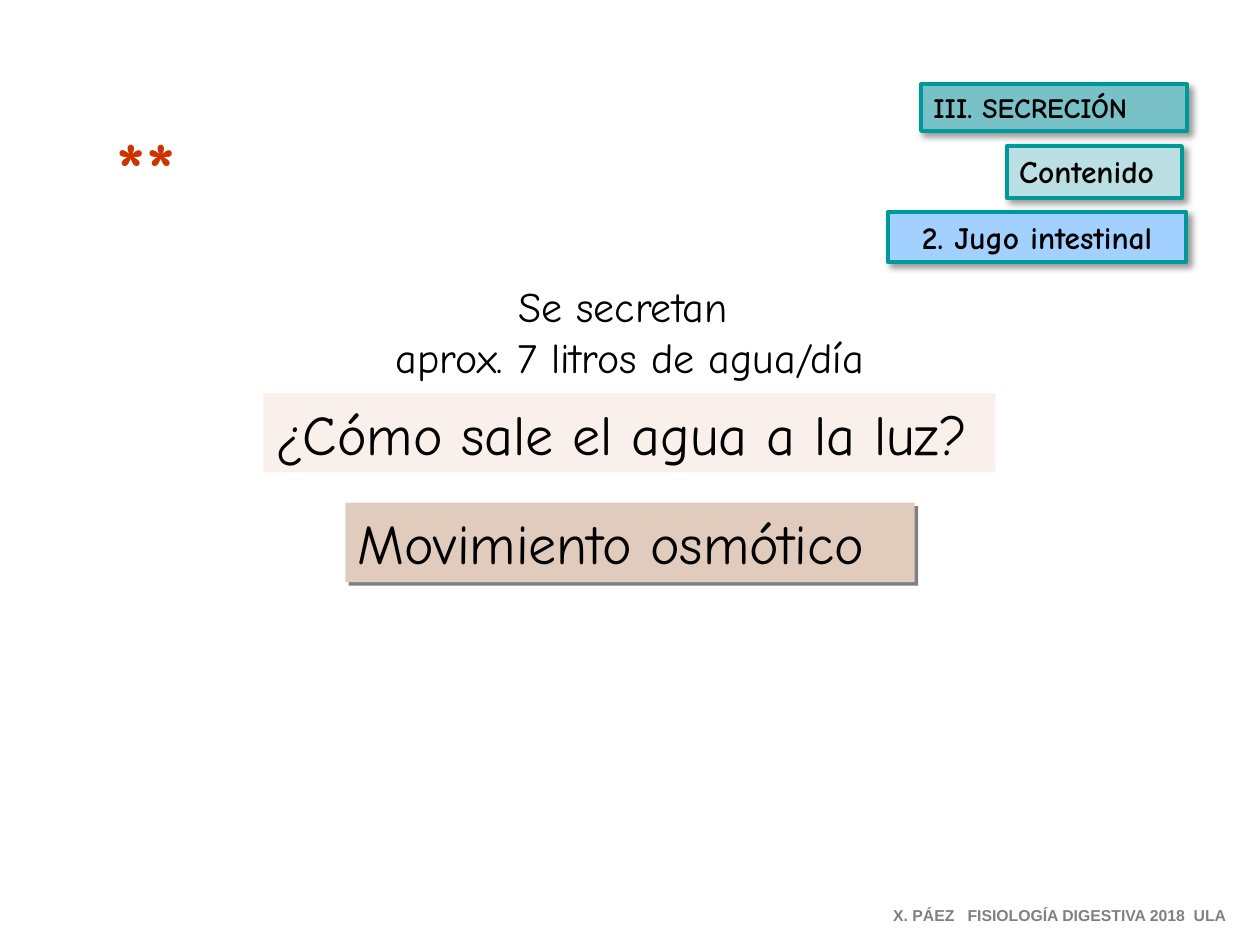
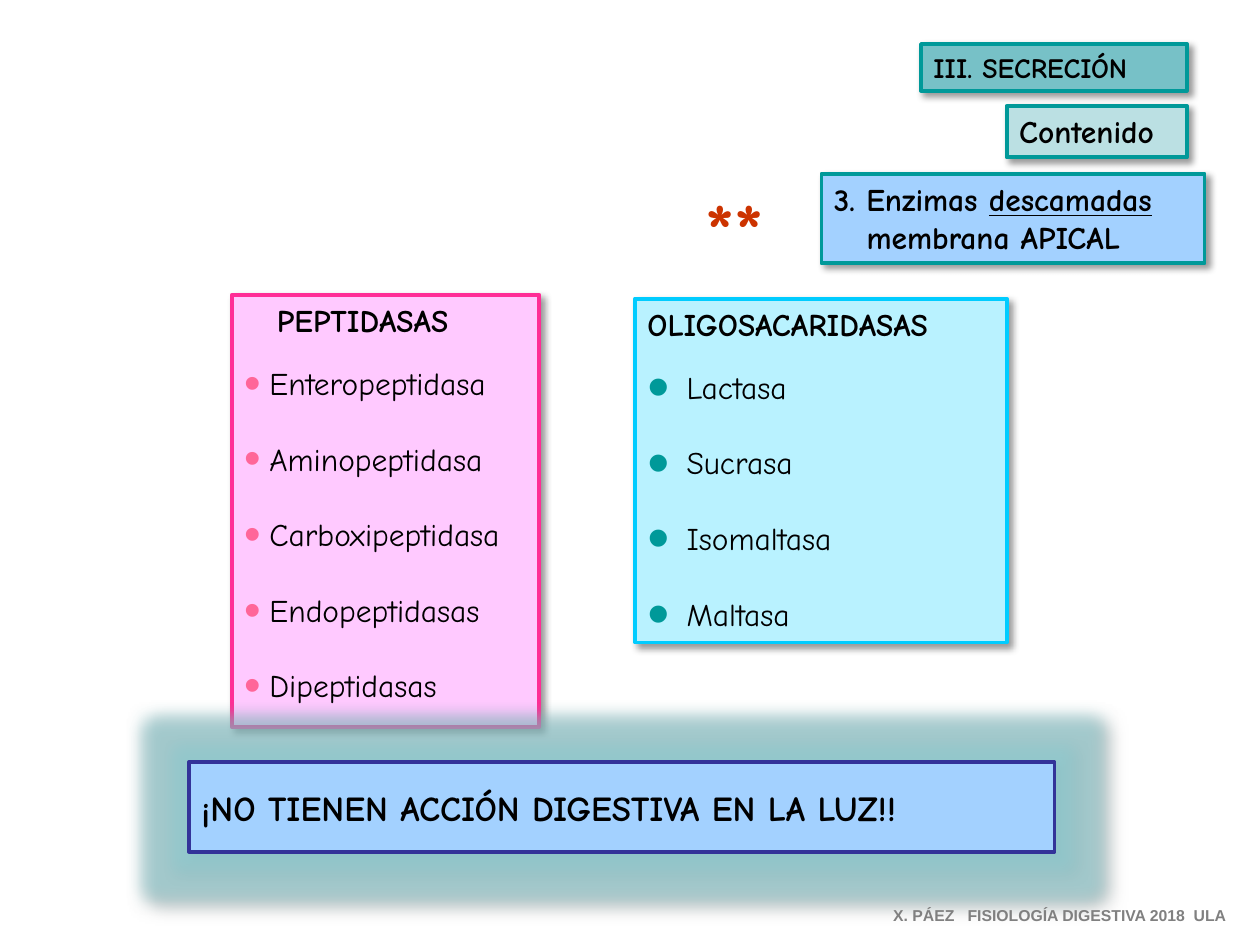
"""Builds two slides on intestinal secretion."""
from dataclasses import dataclass

from lxml.etree import SubElement
from pptx import Presentation
from pptx.dml.color import RGBColor
from pptx.enum.shapes import MSO_SHAPE
from pptx.enum.text import MSO_ANCHOR, PP_ALIGN
from pptx.oxml.ns import qn
from pptx.util import Inches, Pt


@dataclass(frozen=True)
class Theme:
    """Colours, fonts and type sizes of the slides."""
    font: str = "Comic Neue"
    footer_font: str = "Arial"
    black: str = "000000"
    gray: str = "808080"
    red: str = "CC3300"
    teal: str = "009999"
    teal_fill: str = "77C1C7"
    pale_teal: str = "BBE0E3"
    glow: str = "8FCDD2"
    blue_fill: str = "A3D1FF"
    navy: str = "333399"
    cream: str = "F9EFEB"
    tan: str = "E1CBBD"
    pink: str = "FF2D96"
    pink_fill: str = "FFC9FF"
    pink_bullet: str = "FF6699"
    cyan: str = "00CCFF"
    cyan_fill: str = "B9F2FF"
    footer: int = 9
    section: int = 16
    body: int = 18
    banner: int = 20
    lead: int = 24
    question: int = 32
    mark: int = 44
    heading_gap: float = 14.4
    item_gap: float = 21.6


THEME = Theme()
SOFT_SHADOW = (THEME.black, 40, 4, 3)
HARD_SHADOW = (THEME.gray, 100, 0, 2.8)


def add_color(parent, color, alpha):
    """Add a colour with an opacity in percent to an effect."""
    node = SubElement(parent, qn("a:srgbClr"), val=color)
    SubElement(node, qn("a:alpha"), val=str(alpha * 1000))


def add_shadow(effects, color, alpha, blur, distance):
    """Add an outer shadow that falls to the lower right."""
    shadow = SubElement(effects, qn("a:outerShdw"), blurRad=str(Pt(blur)),
                        dist=str(Pt(distance)), dir=str(45 * 60000),
                        algn="ctr", rotWithShape="0")
    add_color(shadow, color, alpha)


def write_text(paragraph, text, size=THEME.body, color=THEME.black, font=THEME.font,
               bold=False, underline=False, shadow=False):
    """Append formatted text to a paragraph."""
    run = paragraph.add_run()
    run.text = text
    run.font.size = Pt(size)
    run.font.name = font
    run.font.bold = bold
    run.font.underline = underline
    run.font.color.rgb = RGBColor.from_string(color)
    if shadow:
        properties = run.font._element
        effects = properties.makeelement(qn("a:effectLst"))
        properties.find(qn("a:solidFill")).addnext(effects)
        add_shadow(effects, THEME.black, 100, 0, 3)


def indent(paragraph, left, first=0):
    """Set the left margin and first-line indent of a paragraph in inches."""
    properties = paragraph._p.get_or_add_pPr()
    properties.set("marL", str(Inches(left)))
    properties.set("indent", str(Inches(first)))
    return properties


class SlideBuilder:
    """Holds the theme, the presentation and the current slide."""

    def __init__(self, theme):
        """Start an empty presentation."""
        self.theme = theme
        self.presentation = Presentation()
        self.presentation.slide_width = Inches(10)
        self.presentation.slide_height = Inches(7.5)
        self.slide = None

    def new_slide(self):
        """Add a blank slide and make it current."""
        self.slide = self.presentation.slides.add_slide(self.presentation.slide_layouts[6])

    def text(self, place, lines, align=PP_ALIGN.LEFT, **style):
        """Add a text box with one paragraph per line."""
        shape = self.slide.shapes.add_textbox(*map(Inches, place))
        shape.text_frame.word_wrap = True
        for number, line in enumerate(lines):
            paragraph = self.paragraph(shape, number)
            paragraph.alignment = align
            write_text(paragraph, line, **style)

    def paragraph(self, shape, number):
        """Return the first paragraph or add another one."""
        frame = shape.text_frame
        return frame.add_paragraph() if number else frame.paragraphs[0]

    def box(self, place, fill, line=None, shadow=None, glow=None, text="",
            align=PP_ALIGN.LEFT, anchor=MSO_ANCHOR.TOP, **style):
        """Add a filled rectangle with optional outline, effects and text."""
        shape = self.slide.shapes.add_shape(MSO_SHAPE.RECTANGLE, *map(Inches, place))
        shape.shadow.inherit = False
        shape.fill.solid()
        shape.fill.fore_color.rgb = RGBColor.from_string(fill)
        if line:
            shape.line.color.rgb = RGBColor.from_string(line)
            shape.line.width = Pt(2.25)
        else:
            shape.line.fill.background()
        effects = shape._element.spPr.find(qn("a:effectLst"))
        if glow:
            add_color(SubElement(effects, qn("a:glow"), rad=str(Pt(18))), glow, 60)
        if shadow:
            add_shadow(effects, *shadow)
        shape.text_frame.word_wrap = True
        shape.text_frame.vertical_anchor = anchor
        paragraph = shape.text_frame.paragraphs[0]
        paragraph.alignment = align
        if text:
            write_text(paragraph, text, **style)
        return shape

    def label(self, place, fill, text="", **style):
        """Add a teal-framed label with bold text."""
        return self.box(place, fill, self.theme.teal, SOFT_SHADOW, text=text,
                        bold=True, **style)

    def section_labels(self, top, content_width):
        """Add the section and content labels at the upper right."""
        theme = self.theme
        self.label((7.31, top, 2.11, 0.37), theme.teal_fill, "III. SECRECIÓN",
                   size=theme.section)
        self.label((7.99, top + 0.49, content_width, 0.41), theme.pale_teal, "Contenido")

    def mark(self, left, top):
        """Add the double asterisk."""
        self.text((left, top, 1.02, 0.83), ["**"], size=self.theme.mark,
                  color=self.theme.red, bold=True, shadow=True)

    def footer(self):
        """Add the course line at the lower right."""
        theme = self.theme
        self.text((6.99, 7.14, 2.9, 0.25), ["X. PÁEZ   FISIOLOGÍA DIGESTIVA 2018  ULA"],
                  size=theme.footer, color=theme.gray, font=theme.footer_font, bold=True)

    def enzyme_list(self, place, fill, line, heading, items, bullet_color,
                    bullet_size, hanging, heading_indent=0):
        """Add a framed enzyme group with a heading and bullets."""
        shape = self.box(place, fill, line, SOFT_SHADOW, text=heading, bold=True)
        indent(shape.text_frame.paragraphs[0], heading_indent)
        for number, item in enumerate(items):
            paragraph = shape.text_frame.add_paragraph()
            paragraph.alignment = PP_ALIGN.LEFT
            paragraph.space_before = Pt(self.theme.item_gap if number
                                        else self.theme.heading_gap)
            properties = indent(paragraph, hanging, -hanging)
            color = SubElement(properties, qn("a:buClr"))
            SubElement(color, qn("a:srgbClr"), val=bullet_color)
            SubElement(properties, qn("a:buSzPct"), val=str(bullet_size * 1000))
            SubElement(properties, qn("a:buFont"), typeface=self.theme.footer_font)
            SubElement(properties, qn("a:buChar"), char="•")
            write_text(paragraph, item)


def build_water_slide(builder):
    """Build the slide on how water reaches the lumen."""
    theme = builder.theme
    builder.new_slide()
    builder.box((2.09, 3.12, 5.81, 0.63), theme.cream,
                text="¿Cómo sale el agua a la luz?", size=theme.question)
    builder.box((2.74, 3.99, 4.52, 0.63), theme.tan, shadow=HARD_SHADOW,
                text="Movimiento osmótico", size=theme.question)
    builder.text((2.85, 2.18, 4.3, 0.9), ["Se secretan ", "aprox. 7 litros de agua/día"],
                 align=PP_ALIGN.CENTER, size=theme.lead)
    builder.mark(0.83, 0.91)
    builder.section_labels(0.67, 1.39)
    builder.label((7.05, 1.68, 2.36, 0.4), theme.blue_fill, "2. Jugo intestinal",
                  align=PP_ALIGN.CENTER)
    builder.footer()


def build_enzyme_slide(builder):
    """Build the slide on the enzymes of the apical membrane."""
    theme = builder.theme
    builder.new_slide()
    builder.enzyme_list(
        (1.84, 2.34, 2.44, 3.43), theme.pink_fill, theme.pink, "PEPTIDASAS",
        ["Enteropeptidasa", "Aminopeptidasa", "Carboxipeptidasa", "Endopeptidasas",
         "Dipeptidasas"],
        theme.pink_bullet, 150, 0.2, heading_indent=0.26)
    builder.enzyme_list(
        (5.04, 2.37, 2.95, 2.73), theme.cyan_fill, theme.cyan, "OLIGOSACARIDASAS",
        ["Lactasa", "Sucrasa", "Isomaltasa", "Maltasa"], theme.teal, 200, 0.31)
    builder.box((1.5, 6.05, 6.87, 0.71), theme.blue_fill, theme.navy, SOFT_SHADOW,
                theme.glow, "¡NO TIENEN ACCIÓN DIGESTIVA EN LA LUZ!!",
                anchor=MSO_ANCHOR.MIDDLE, size=theme.banner, bold=True)
    builder.mark(5.5, 1.39)
    topic = builder.label((6.52, 1.38, 3.04, 0.71), theme.blue_fill, "3. Enzimas ")
    write_text(topic.text_frame.paragraphs[0], "descamadas", bold=True, underline=True)
    second_line = topic.text_frame.add_paragraph()
    second_line.alignment = PP_ALIGN.LEFT
    indent(second_line, 0.26)
    write_text(second_line, "membrana APICAL", bold=True)
    builder.section_labels(0.35, 1.43)
    builder.footer()


def main():
    """Build and save the presentation."""
    builder = SlideBuilder(THEME)
    build_water_slide(builder)
    build_enzyme_slide(builder)
    builder.presentation.save("out.pptx")


if __name__ == "__main__":
    main()
